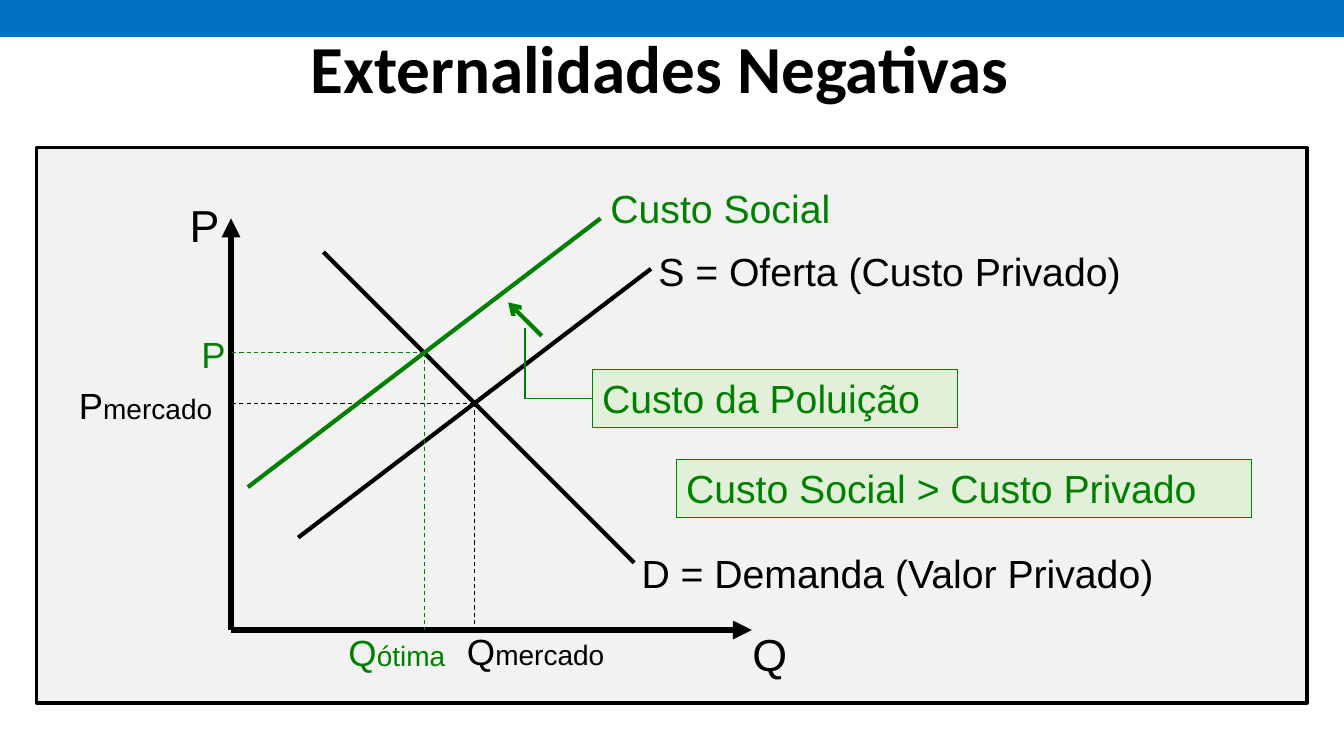
from dataclasses import dataclass

from lxml import etree
from pptx import Presentation
from pptx.dml.color import RGBColor
from pptx.enum.dml import MSO_LINE
from pptx.enum.shapes import MSO_CONNECTOR, MSO_SHAPE
from pptx.enum.text import MSO_ANCHOR, PP_ALIGN
from pptx.oxml.ns import qn
from pptx.shapes.autoshape import Shape
from pptx.shapes.connector import Connector
from pptx.slide import Slide
from pptx.util import Emu, Inches, Pt

RECT = MSO_SHAPE.RECTANGLE
STRAIGHT = MSO_CONNECTOR.STRAIGHT
DASH = MSO_LINE.DASH
TOP, MIDDLE = MSO_ANCHOR.TOP, MSO_ANCHOR.MIDDLE
CENTER = PP_ALIGN.CENTER
LEFT_SIDE = 1

COLS, ROWS = 160, 90
CELL = Inches(1 / 12)
ORIGIN_COL, ORIGIN_ROW = 27.5, 75


@dataclass(frozen=True)
class Theme:
    black: str = "000000"
    green: str = "008000"
    pale_green: str = "E2F0D9"
    blue: str = "0070C0"
    grey: str = "F2F2F2"
    title_font: str = "Calibri"
    body_font: str = "Arial"
    title: int = 48
    axis: int = 32
    label: int = 28
    symbol: int = 26
    subscript: int = 20
    axis_line: float = 4.5
    curve_line: float = 3
    frame_line: float = 2.25
    thin_line: float = 0.75


T = Theme()


@dataclass(frozen=True)
class Box:
    col: float
    row: float
    cols: float
    rows: float


@dataclass(frozen=True)
class Label:
    box: Box
    text: str
    size: int
    color: str = T.black
    subscript: str = ""


@dataclass(frozen=True)
class Segment:
    x1: float
    y1: float
    x2: float
    y2: float
    width: float
    color: str = T.black
    dashed: bool = False
    head: str = ""


def guides(q: float, p: float, color: str) -> list[Segment]:
    return [Segment(q, p, q, 0, T.thin_line, color, True),
            Segment(q, p, 0, p, T.thin_line, color, True)]


SHIFT = 6
SUPPLY = (8, 11, 50, 43)
SOCIAL = tuple(v + d for v, d in zip(SUPPLY, (-SHIFT, SHIFT) * 2))
MARKET_Q, MARKET_P = 29, 27
LEADER_X = 35

SEGMENTS = [
    Segment(0, 0, 0, 49, T.axis_line, head="triangle"),
    Segment(0, 0, 62, 0, T.axis_line, head="triangle"),
    Segment(11, 45, 48, 8, T.curve_line),
    Segment(*SUPPLY, T.curve_line),
    *guides(MARKET_Q, MARKET_P, T.black),
    Segment(*SOCIAL, T.curve_line, T.green),
    *guides(MARKET_Q - SHIFT, MARKET_P + SHIFT, T.green),
    Segment(37, 35, 33, 39, T.curve_line, T.green, head="arrow"),
]

LABELS = [
    Label(Box(21.4, 23, 7, 7.7), "P", T.axis),
    Label(Box(88.4, 74, 7, 7.7), "Q", T.axis),
    Label(Box(77.2, 28.9, 61.4, 6.8), "S = Oferta (Custo Privado)", T.label),
    Label(Box(75.2, 64.8, 67.8, 6.8), "D = Demanda (Valor Privado)", T.label),
    Label(Box(54.4, 74.3, 20, 6.5), "Q", T.symbol, subscript="mercado"),
    Label(Box(8.2, 45, 22, 6.5), "P", T.symbol, subscript="mercado"),
    Label(Box(71.5, 21.4, 37, 6.8), "Custo Social", T.label, T.green),
    Label(Box(40.3, 74.4, 18, 6.5), "Q", T.symbol, T.green, "ótima"),
    Label(Box(22.8, 39, 18, 6.5), "P", T.symbol, T.green),
]

POLLUTION = Label(Box(70.5, 44, 43.5, 6.9), "Custo da Poluição", T.label, T.green)
CONCLUSION = Label(Box(80.5, 54.7, 68.5, 6.9), "Custo Social > Custo Privado",
                   T.label, T.green)


def rgb(color: str) -> RGBColor:
    return RGBColor.from_string(color)


def place(box: Box) -> list[Emu]:
    return [Emu(round(v * CELL)) for v in (box.col, box.row, box.cols, box.rows)]


def add_rect(s: Slide, box: Box, fill: str, line: str = "", width: float = 0) -> Shape:
    sp = s.shapes.add_shape(RECT, *place(box))
    sp.shadow.inherit = False
    sp.fill.solid()
    sp.fill.fore_color.rgb = rgb(fill)
    if line:
        sp.line.color.rgb = rgb(line)
        sp.line.width = Pt(width)
    else:
        sp.line.fill.background()
    return sp


def add_segment(s: Slide, seg: Segment) -> Connector:
    ends = (ORIGIN_COL + seg.x1, ORIGIN_ROW - seg.y1,
            ORIGIN_COL + seg.x2, ORIGIN_ROW - seg.y2)
    cx = s.shapes.add_connector(STRAIGHT, *(Emu(round(v * CELL)) for v in ends))
    cx.line.color.rgb = rgb(seg.color)
    cx.line.width = Pt(seg.width)
    if seg.dashed:
        cx.line.dash_style = DASH
    if seg.head:
        ln = cx.line.color and cx.element.spPr.find(qn("a:ln"))
        etree.SubElement(ln, qn("a:tailEnd"), type=seg.head)
    etree.SubElement(cx.element.spPr, qn("a:effectLst"))
    return cx


def write(sp: Shape, label: Label) -> None:
    tf = sp.text_frame
    tf.word_wrap = True
    tf.vertical_anchor = TOP
    p = tf.paragraphs[0]
    p.alignment = PP_ALIGN.LEFT
    for text, size in ((label.text, label.size), (label.subscript, T.subscript)):
        if text:
            r = p.add_run()
            r.text = text
            r.font.name = T.body_font
            r.font.size = Pt(size)
            r.font.color.rgb = rgb(label.color)


def add_callout(s: Slide, label: Label) -> Shape:
    sp = add_rect(s, label.box, T.pale_green, T.green, T.thin_line)
    write(sp, label)
    return sp


def add_leader(s: Slide, target: Shape, box: Box) -> None:
    level = ORIGIN_ROW - box.row - box.rows / 2
    add_segment(s, Segment(LEADER_X, 36, LEADER_X, level, T.thin_line, T.green))
    cx = add_segment(s, Segment(LEADER_X, level, box.col - ORIGIN_COL, level,
                                T.thin_line, T.green))
    cx.end_connect(target, LEFT_SIDE)


def set_title(s: Slide, text: str, box: Box) -> None:
    sp = s.shapes.title
    sp.left, sp.top, sp.width, sp.height = place(box)
    tf = sp.text_frame
    tf.text = text
    tf.vertical_anchor = MIDDLE
    p = tf.paragraphs[0]
    p.alignment = CENTER
    p.line_spacing = 0.9
    font = p.runs[0].font
    font.name, font.size, font.bold = T.title_font, Pt(T.title), True
    font.color.rgb = rgb(T.black)


def main() -> None:
    prs = Presentation()
    prs.slide_width, prs.slide_height = COLS * CELL, ROWS * CELL
    s = prs.slides.add_slide(prs.slide_layouts[5])
    add_rect(s, Box(0, 0, COLS, 4.4), T.blue)
    add_rect(s, Box(4.4, 17.6, 151.2, 66.1), T.grey, T.black, T.frame_line)
    for seg in SEGMENTS:
        add_segment(s, seg)
    for label in LABELS:
        write(s.shapes.add_textbox(*place(label.box)), label)
    add_leader(s, add_callout(s, POLLUTION), POLLUTION.box)
    add_callout(s, CONCLUSION)
    set_title(s, "Externalidades Negativas", Box(34.7, -0.4, 87.7, 18))
    prs.save("out.pptx")


if __name__ == "__main__":
    main()
